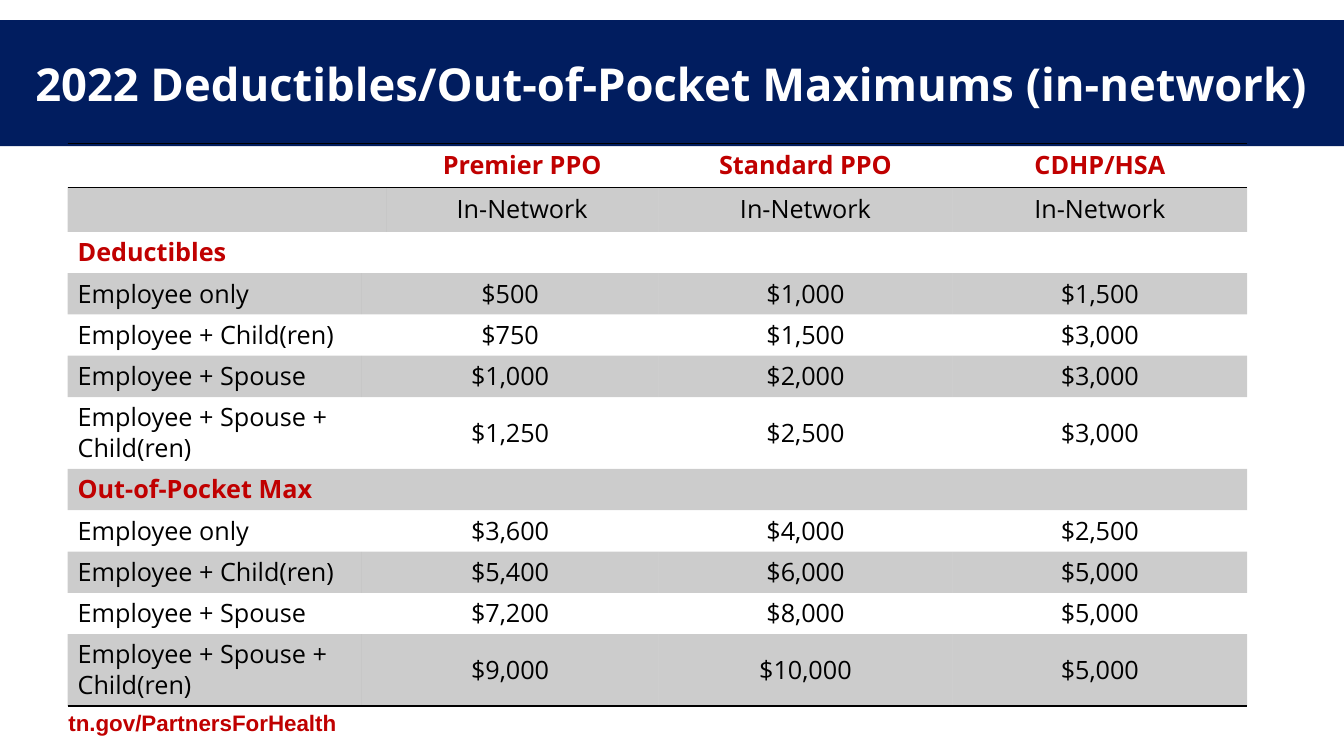
"""Build the 2022 deductibles and out-of-pocket maximums slide."""
from dataclasses import dataclass

from lxml.etree import SubElement
from pptx import Presentation
from pptx.dml.color import RGBColor
from pptx.enum.text import MSO_ANCHOR, MSO_AUTO_SIZE, PP_ALIGN
from pptx.oxml.ns import qn
from pptx.util import Inches, Pt

NAVY, RED, BLACK, WHITE = "011D5F", "C00000", "000000", "FFFFFF"
NO_STYLE = "{2D5ABB26-0587-4C30-8999-92F81FD0307C}"
COL_WIDTHS = (2.92, 0.22, 2.7, 2.92, 2.92)


@dataclass(frozen=True)
class Row:
    label: str
    values: tuple[str, ...] = ()
    heading: bool = False
    height: float = 0.41
    borders: tuple[str, ...] = ()


ROWS = (
    Row("", ("Premier PPO", "Standard PPO", "CDHP/HSA"), True, 0.44, ("a:lnT", "a:lnB")),
    Row("", ("In-Network",) * 3, height=0.44),
    Row("Deductibles", heading=True),
    Row("Employee only", ("$500", "$1,000", "$1,500")),
    Row("Employee + Child(ren)", ("$750", "$1,500", "$3,000")),
    Row("Employee + Spouse", ("$1,000", "$2,000", "$3,000")),
    Row("Employee + Spouse + Child(ren)", ("$1,250", "$2,500", "$3,000"), height=0.71),
    Row("Out-of-Pocket Max", heading=True),
    Row("Employee only", ("$3,600", "$4,000", "$2,500")),
    Row("Employee + Child(ren)", ("$5,400", "$6,000", "$5,000")),
    Row("Employee + Spouse", ("$7,200", "$8,000", "$5,000")),
    Row("Employee + Spouse + Child(ren)", ("$9,000", "$10,000", "$5,000"),
        height=0.71, borders=("a:lnB",)),
)


def rgb(color: str) -> RGBColor:
    return RGBColor.from_string(color)


def write(tf, text: str, size: float, color: str, bold: bool,
          font: str = "Open Sans", align=PP_ALIGN.LEFT, spacing: float = 0.9) -> None:
    p = tf.paragraphs[0]
    p.text = text
    p.alignment, p.line_spacing, p.space_before = align, spacing, Pt(0)
    f = p.font
    f.name, f.size, f.bold = font, Pt(size), bold
    f.color.rgb = rgb(color)


def format_cell(cell, borders: tuple[str, ...], shaded: bool) -> None:
    tc_pr = cell._tc.get_or_add_tcPr()
    for tag in borders:
        ln = SubElement(tc_pr, qn(tag), w=str(Pt(1)))
        fill = SubElement(ln, qn("a:solidFill"))
        SubElement(fill, qn("a:srgbClr"), val=BLACK)
    cell.vertical_anchor = MSO_ANCHOR.MIDDLE
    if shaded:
        cell.fill.solid()
        cell.fill.fore_color.rgb = rgb(BLACK)
        SubElement(tc_pr.find(".//" + qn("a:srgbClr") + "[last()]")
                   if not borders else tc_pr.find(qn("a:solidFill"))[0],
                   qn("a:alpha"), val="20000")
    else:
        cell.fill.background()


def add_title(s) -> None:
    sp = s.shapes.title
    sp.left, sp.top, sp.width, sp.height = map(Inches, (0, 0.2, 13.33, 1.25))
    sp.fill.solid()
    sp.fill.fore_color.rgb = rgb(NAVY)
    tf = sp.text_frame
    tf.auto_size = MSO_AUTO_SIZE.NONE
    tf.vertical_anchor = MSO_ANCHOR.MIDDLE
    tf.margin_left = Inches(0.35)
    write(tf, "2022 Deductibles/Out-of-Pocket Maximums (in-network)",
          32.4, WHITE, True, spacing=1.0)


def fill_row(table, index: int, row: Row) -> None:
    table.rows[index].height = Inches(row.height)
    cells = [table.cell(index, c) for c in range(len(COL_WIDTHS))]
    for cell in cells:
        format_cell(cell, row.borders, shaded=index % 2 == 1)
        write(cell.text_frame, "", 12, BLACK, False)
    if not row.values:
        cells[0].merge(cells[-1])
    elif row.label:
        cells[1].merge(cells[2])
    else:
        cells[0].merge(cells[1])
    color = RED if row.heading else BLACK
    if row.label:
        write(cells[0].text_frame, row.label, 18, color, row.heading)
    first = 1 if row.label else 2
    for cell, value in zip((cells[first], *cells[3:]), row.values):
        write(cell.text_frame, value, 18, color, row.heading, align=PP_ALIGN.CENTER)


def add_plan_table(s) -> None:
    height = sum(row.height for row in ROWS)
    table = s.shapes.add_table(len(ROWS), len(COL_WIDTHS), Inches(0.67), Inches(1.42),
                               Inches(sum(COL_WIDTHS)), Inches(height)).table
    table.first_row = table.horz_banding = False
    table._tbl.tblPr.find(qn("a:tableStyleId")).text = NO_STYLE
    for column, width in zip(table.columns, COL_WIDTHS):
        column.width = Inches(width)
    for index, row in enumerate(ROWS):
        fill_row(table, index, row)


def add_web_address(s) -> None:
    tf = s.shapes.add_textbox(*map(Inches, (0.58, 7.02, 4, 0.34))).text_frame
    tf.word_wrap = True
    write(tf, "tn.gov/PartnersForHealth", 16, RED, True, "Arial")


def main() -> None:
    prs = Presentation()
    prs.slide_width, prs.slide_height = Inches(13.33), Inches(7.5)
    s = prs.slides.add_slide(prs.slide_layouts[5])
    add_title(s)
    add_plan_table(s)
    add_web_address(s)
    prs.save("out.pptx")


if __name__ == "__main__":
    main()
